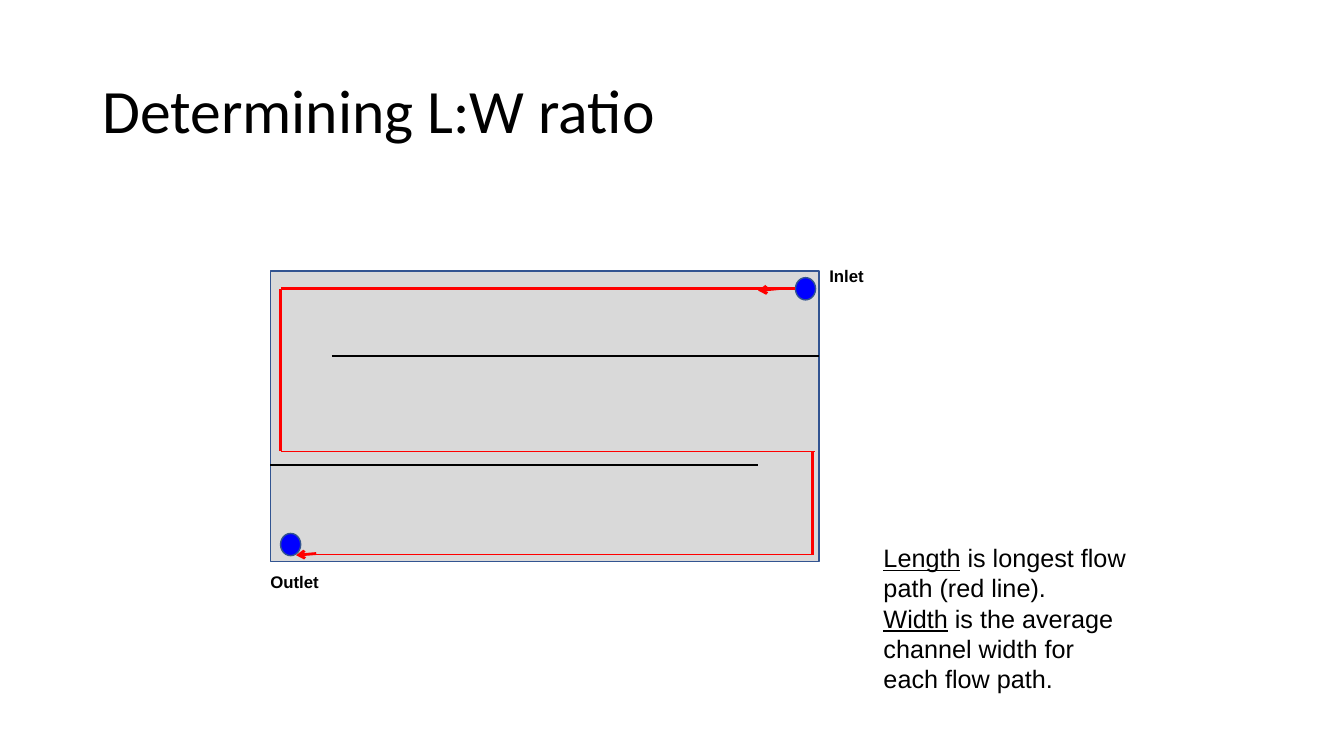
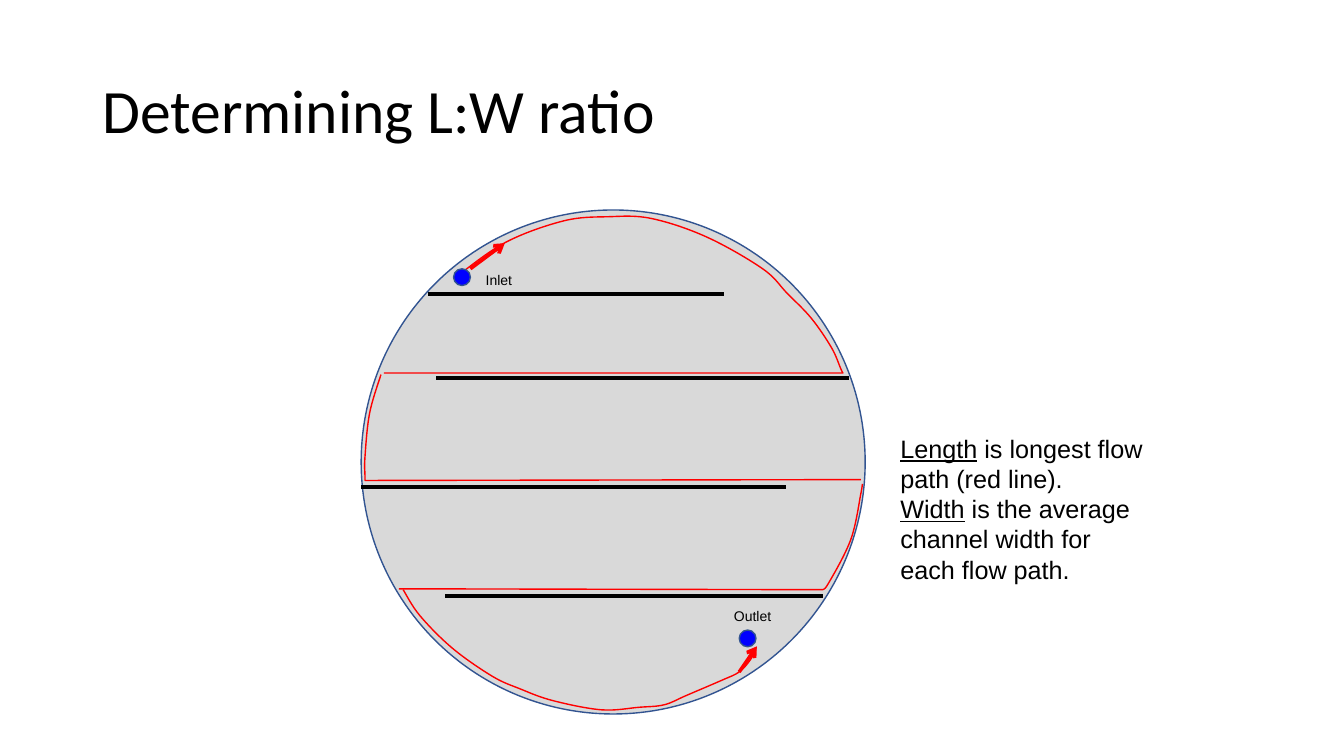
from dataclasses import dataclass

from pptx import Presentation
from pptx.dml.color import RGBColor
from pptx.enum.shapes import MSO_CONNECTOR as LINE, MSO_SHAPE as SHAPE
from pptx.enum.text import MSO_ANCHOR as ANCHOR
from pptx.oxml.ns import qn
from pptx.util import Inches, Pt
from lxml.etree import Element, SubElement

# The slide is a grid of 160 columns by 90 rows of square cells.
COLS, ROWS = 160, 90
CELL = Inches(7.5) / ROWS


@dataclass(frozen=True)
class Theme:
    ink: str = "000000"
    basin: str = "D9D9D9"
    outline: str = "325491"
    port: str = "0000FF"
    flow: str = "FF0000"
    title_font: str = "Calibri"
    body_font: str = "Arial"
    title_size: float = 44
    note_size: float = 18
    label_size: float = 12
    small_label_size: float = 10
    thin: float = 1
    thick: float = 2.08


THEME = Theme()
TITLE = "Determining L:W ratio"
DEFINITIONS = (
    ("Length", " is longest flow path (red line)."),
    ("Width", " is the average channel width for each flow path."),
)


def cells(*counts):
    return [round(n * CELL) for n in counts]


def style_font(p, name, size, bold=False):
    p.font.name, p.font.size, p.font.bold = name, Pt(size), bold
    p.font.color.rgb = RGBColor.from_string(THEME.ink)


def style_line(line, color, width):
    line.color.rgb = RGBColor.from_string(color)
    line.width = Pt(width)


def add_text_frame(slide, box):
    tf = slide.shapes.add_textbox(*cells(*box)).text_frame
    tf.word_wrap = True
    return tf


def add_title(slide):
    tf = add_text_frame(slide, (11, 4.8, 138, 17.4))
    tf.vertical_anchor = ANCHOR.MIDDLE
    p = tf.paragraphs[0]
    p.text, p.line_spacing = TITLE, 0.9
    style_font(p, THEME.title_font, THEME.title_size)


def add_definitions(slide, left, top):
    tf = add_text_frame(slide, (left, top, 32, 19.4))
    for i, (term, meaning) in enumerate(DEFINITIONS):
        p = tf.add_paragraph() if i else tf.paragraphs[0]
        style_font(p, THEME.body_font, THEME.note_size)
        r = p.add_run()
        r.text, r.font.underline = term, True
        p.add_run().text = meaning


def add_label(slide, text, box, size, bold=False):
    p = add_text_frame(slide, box).paragraphs[0]
    p.text = text
    style_font(p, THEME.body_font, size, bold)


def add_solid(slide, kind, box, fill):
    sp = slide.shapes.add_shape(kind, *cells(*box))
    sp.shadow.inherit = False
    sp.fill.solid()
    sp.fill.fore_color.rgb = RGBColor.from_string(fill)
    style_line(sp.line, THEME.outline, THEME.thin)


def add_line(slide, start, end, color, width, arrow=False):
    sp = slide.shapes.add_connector(LINE.STRAIGHT, *cells(*start, *end))
    style_line(sp.line, color, width)
    props = sp._element.spPr
    if arrow:
        SubElement(props.find(qn("a:ln")), qn("a:tailEnd"), type="arrow")
    SubElement(props, qn("a:effectLst"))


def round_off(sp, count):
    """Turn the first count segments into Bezier curves through their ends."""
    geometry = sp._element.spPr.find(qn("a:custGeom"))
    knots = [(int(pt.get("x")), int(pt.get("y")))
             for pt in geometry.iter(qn("a:pt"))][:count + 1]
    padded = [knots[0], *knots, knots[-1]]
    segments = list(geometry.iter(qn("a:lnTo")))[:count]
    for seg, a, b, c, d in zip(segments, padded, padded[1:],
                               padded[2:], padded[3:]):
        controls = ([q + (r - p) / 6 for p, q, r in zip(a, b, c)],
                    [q - (r - p) / 6 for p, q, r in zip(b, c, d)])
        seg.tag = qn("a:cubicBezTo")
        for i, (x, y) in enumerate(controls):
            seg.insert(i, Element(qn("a:pt"), x=str(round(x)),
                                  y=str(round(y))))


def add_curve(slide, bend, straight):
    """Draw a smooth bend followed by straight segments."""
    start, *rest = [cells(*pt) for pt in bend + straight]
    builder = slide.shapes.build_freeform(*start)
    builder.add_line_segments(rest, close=False)
    sp = builder.convert_to_shape()
    round_off(sp, len(bend) - 1)
    sp.shadow.inherit = False
    sp.fill.background()
    style_line(sp.line, THEME.flow, THEME.thin)


def add_slide(prs):
    slide = prs.slides.add_slide(prs.slide_layouts[6])
    add_title(slide)
    return slide


def rectangular_basin(slide):
    left, top, width, height = 32.2, 32.25, 65.3, 34.6
    right, wall = left + width, 58
    add_definitions(slide, 104, 64)
    add_solid(slide, SHAPE.RECTANGLE, (left, top, width, height), THEME.basin)
    for x, y in ((right - wall, 42.4), (left, 55.35)):
        add_line(slide, (x, y), (x + wall, y), THEME.ink, 1.5)
    for x, y in ((94.7, 33.05), (33.4, 63.5)):
        add_solid(slide, SHAPE.OVAL, (x, y, 2.4, 2.65), THEME.port)
    for text, x, y, w in (("Inlet", 97.55, 31, 8.5),
                          ("Outlet", 31, 67.45, 10.9)):
        add_label(slide, text, (x, y, w, 3.6), THEME.label_size, bold=True)

    near, far, first, middle, last = 33.4, 96.78, 34.35, 53.72, 66
    for start, end, width in (
        ((94.7, first), (near, first), THEME.thick),
        ((97.05, middle), (near, middle), THEME.thin),
        ((near, middle), (near, first), THEME.thick),
        ((far, 66.1), (far, 53.85), THEME.thick),
        ((far, last), (36.5, last), THEME.thin),
    ):
        add_line(slide, start, end, THEME.flow, width)
    for start, end in (((37.65, 65.9), (35.25, 66.1)),
                       ((92.8, 34.35), (90.25, 34.6))):
        add_line(slide, start, end, THEME.flow, 2, arrow=True)


def round_basin(slide):
    add_definitions(slide, 106, 50.95)
    add_solid(slide, SHAPE.OVAL, (43, 25, 60, 60), THEME.basin)
    for x1, x2, y in ((51, 86.2, 35), (51.95, 101.1, 45),
                      (43, 93.6, 58), (53, 98, 71)):
        add_line(slide, (x1, y), (x2, y), THEME.ink, 3)
    for bend, straight in (
        ([(54, 33.2), (60.1, 28.9), (67.1, 26.3), (72.4, 25.8), (77.5, 26),
          (84.1, 28.2), (90.8, 32), (93.7, 34.9), (96.6, 37.9), (99, 41.4),
          (100.1, 43.9), (100.35, 44.4)], [(45.7, 44.4)]),
        ([(45.35, 44.6), (44, 49.2), (43.45, 54.4), (43.45, 56.6)],
         [(43.45, 57.2), (102.5, 57.1)]),
        ([(102.65, 57.6), (102.5, 58.7), (101.3, 64.2), (98.6, 69.5),
          (97.8, 70.2)], [(47.5, 70.1)]),
    ):
        add_curve(slide, bend, straight)
    for x, y in ((54, 32), (88, 75)):
        add_solid(slide, SHAPE.OVAL, (x, y, 2, 2), THEME.port)
    add_curve(slide, [
        (48, 70.2), (50, 73.3), (53.9, 77.2), (58.6, 80.5), (61.9, 82),
        (65.8, 83.4), (71.6, 84.5), (76.1, 84.2), (79.1, 83.9),
        (81.7, 82.8), (85.9, 81), (88, 80), (89.3, 78.6), (90, 77.3)], [])
    for start, end in (((88, 80), (90.1, 76.95)), ((56, 32), (60.1, 28.95))):
        add_line(slide, start, end, THEME.flow, 2.5, arrow=True)
    for text, x, y in (("Inlet", 56.65, 31.75), ("Outlet", 86.2, 71.75)):
        add_label(slide, text, (x, y, 7, 3.2), THEME.small_label_size)


def main():
    prs = Presentation()
    prs.slide_width, prs.slide_height = cells(COLS, ROWS)
    for draw_basin in (rectangular_basin, round_basin):
        draw_basin(add_slide(prs))
    prs.save("out.pptx")


if __name__ == "__main__":
    main()
